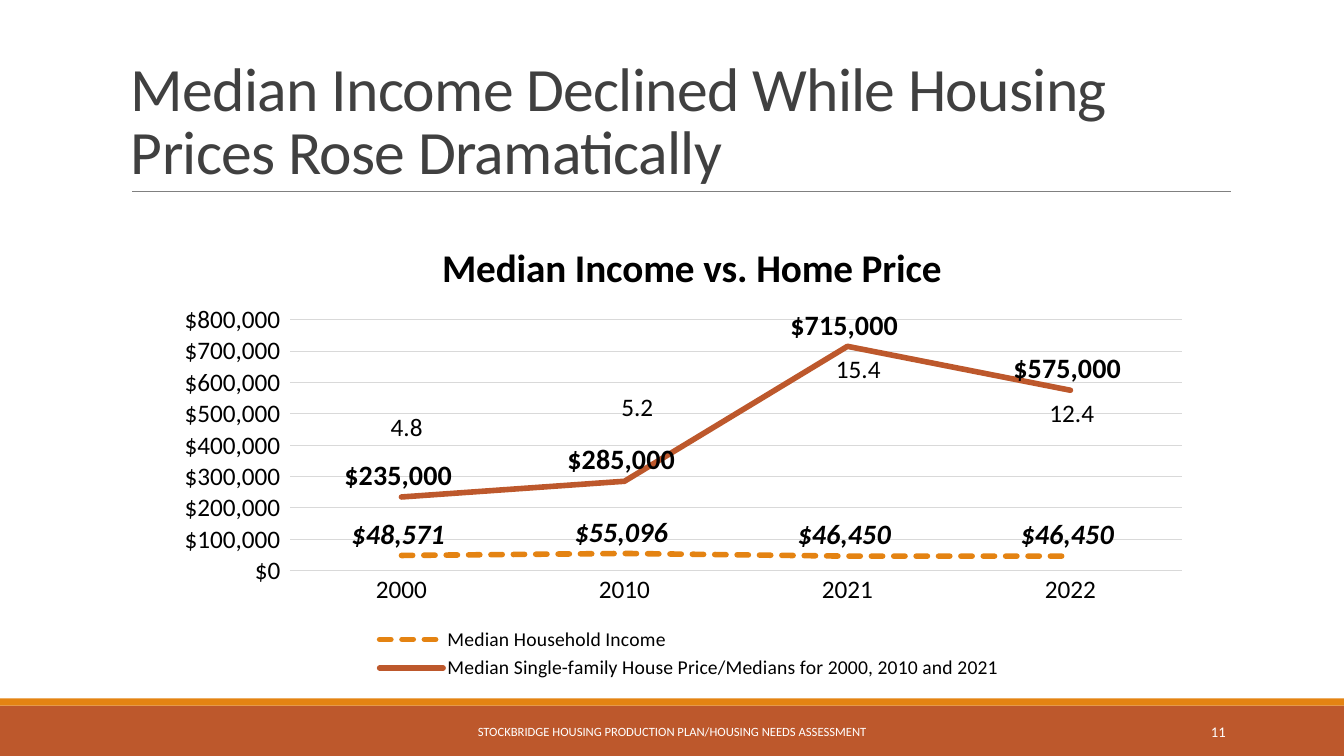
import pptx
import pptx.chart.data
import pptx.dml.color
import pptx.enum.chart
import pptx.enum.dml
import pptx.enum.shapes
import pptx.enum.text
import pptx.oxml
import pptx.oxml.ns
import pptx.util
from pptx.util import Cm

FONT = "Calibri"
COLORS = {"rust": "BD582C", "orange": "E48312", "rule": "808080", "heading": "404040",
          "white": "FFFFFF", "black": "000000", "grid": "D9D9D9"}
HEADING = "Median Income Declined While Housing\vPrices Rose Dramatically"
FOOTER = "STOCKBRIDGE HOUSING PRODUCTION PLAN/HOUSING NEEDS ASSESSMENT"
PAGE_NUMBER = "11"
CHART_TITLE = "Median Income vs. Home Price"
YEARS = ["2000", "2010", "2021", "2022"]
DOLLARS = '"$"#,##0_);[Red]\\("$"#,##0\\)'
# name, values, color, dashed line with italic labels
SERIES = [
    ("Median Household Income", (48571, 55096, 46450, 46450), "orange", True),
    ("Median Single-family House Price/Medians for 2000, 2010 and 2021",
     (235000, 285000, 715000, 575000), "rust", False),
]
# price-to-income ratio, left, top, width in cm
RATIOS = [("4.8", 9.07, 10.24, 2.36), ("5.2", 14.88, 9.73, 2.36),
          ("15.4", 20.68, 8.79, 1.9), ("12.4", 25.83, 9.88, 2.36)]
SLIDE_WIDTH, SLIDE_HEIGHT = 33.87, 19.05
FOOTER_HEIGHT, ACCENT_HEIGHT = 1.27, 0.18

ALIGN = pptx.enum.text.PP_ALIGN
ANCHOR = pptx.enum.text.MSO_ANCHOR


def rgb(color):
    return pptx.dml.color.RGBColor.from_string(COLORS[color])


def style_font(font, size, color="black", bold=False, italic=False):
    font.name = FONT
    font.size = pptx.util.Pt(size)
    font.color.rgb = rgb(color)
    font.bold = bold
    font.italic = italic


def style_line(line, color, width):
    line.color.rgb = rgb(color)
    line.width = pptx.util.Pt(width)


def add_bar(slide, top, height, color):
    bar = slide.shapes.add_shape(pptx.enum.shapes.MSO_SHAPE.RECTANGLE,
                                 0, Cm(top), Cm(SLIDE_WIDTH), Cm(height))
    bar.shadow.inherit = False
    bar.fill.solid()
    bar.fill.fore_color.rgb = rgb(color)
    bar.line.fill.background()


def add_text(slide, box, text, size, color="black", align=ALIGN.CENTER, anchor=ANCHOR.TOP):
    frame = slide.shapes.add_textbox(*map(Cm, box)).text_frame
    frame.word_wrap = True
    frame.vertical_anchor = anchor
    frame.text = text
    paragraph = frame.paragraphs[0]
    paragraph.alignment = align
    style_font(paragraph.font, size, color)
    return paragraph


def add_heading(slide):
    heading = add_text(slide, (3.05, 0.79, 27.94, 4.04), HEADING, 44, "heading",
                       ALIGN.LEFT, ANCHOR.BOTTOM)
    heading.line_spacing = 0.85
    for run in heading.runs:
        run.font._element.set("spc", "-50")
    rule = slide.shapes.add_connector(pptx.enum.shapes.MSO_CONNECTOR.STRAIGHT,
                                      Cm(3.33), Cm(4.83), Cm(31.01), Cm(4.83))
    style_line(rule.line, "rule", 0.5)
    rule._element.spPr.append(pptx.oxml.parse_xml(
        f'<a:effectLst {pptx.oxml.ns.nsdecls("a")}/>'))


def place(part, index, inner=False, **fractions):
    """Set a chart part's manual layout, in fractions of the chart's size."""
    for old in part.findall(pptx.oxml.ns.qn("c:layout")):
        part.remove(old)
    target = '<c:layoutTarget val="inner"/>' if inner else ""
    modes = '<c:xMode val="edge"/><c:yMode val="edge"/>'
    values = "".join(f'<c:{key} val="{value}"/>' for key, value in fractions.items())
    part.insert(index, pptx.oxml.parse_xml(
        f'<c:layout {pptx.oxml.ns.nsdecls("c")}><c:manualLayout>'
        f'{target}{modes}{values}</c:manualLayout></c:layout>'))


def style_axes(chart):
    for axis in (chart.category_axis, chart.value_axis):
        axis.major_tick_mark = axis.minor_tick_mark = pptx.enum.chart.XL_TICK_MARK.NONE
        style_font(axis.tick_labels.font, 18)
    style_line(chart.category_axis.format.line, "grid", 0.75)
    dollars = chart.value_axis
    dollars.minimum_scale, dollars.maximum_scale, dollars.major_unit = 0, 800000, 100000
    dollars.format.line.fill.background()
    style_line(dollars.major_gridlines.format.line, "grid", 0.75)
    dollars.tick_labels.number_format = DOLLARS
    dollars.tick_labels.number_format_is_linked = False


def style_series(series, color, dashed):
    series.smooth = False
    series.marker.style = pptx.enum.chart.XL_MARKER_STYLE.NONE
    line = series.format.line
    style_line(line, color, 4)
    if dashed:
        line.dash_style = pptx.enum.dml.MSO_LINE.SQUARE_DOT
    series._element.spPr.find(pptx.oxml.ns.qn("a:ln")).set("cap", "rnd")
    labels = series.data_labels
    labels.show_value = True
    labels.position = pptx.enum.chart.XL_LABEL_POSITION.ABOVE
    labels.number_format = DOLLARS
    labels.number_format_is_linked = False
    style_font(labels.font, 20, bold=True, italic=dashed)


def add_price_chart(slide):
    figures = pptx.chart.data.CategoryChartData(number_format=DOLLARS)
    figures.categories = YEARS
    for name, values, _, _ in SERIES:
        figures.add_series(name, values)
    chart = slide.shapes.add_chart(pptx.enum.chart.XL_CHART_TYPE.LINE, Cm(4.17), Cm(5.31),
                                   Cm(26.14), Cm(11.94), figures).chart
    style_font(chart.font, 10)
    chart.plots[0].vary_by_categories = False
    style_axes(chart)
    for series, (_, _, color, dashed) in zip(chart.plots[0].series, SERIES):
        style_series(series, color, dashed)

    chart.has_title = True
    chart.chart_title.text_frame.text = CHART_TITLE
    style_font(chart.chart_title.text_frame.paragraphs[0].font, 28, bold=True)
    chart.has_legend = True
    chart.legend.position = pptx.enum.chart.XL_LEGEND_POSITION.BOTTOM
    chart.legend.include_in_layout = False
    style_font(chart.legend.font, 14)

    place(chart.chart_title._element, 1, x=0.26, y=0.05)
    place(chart.legend._element, 1, x=0.2, y=0.87, w=0.61, h=0.13)
    place(chart._chartSpace.chart.plotArea, 0, inner=True, x=0.12, y=0.23, w=0.86, h=0.53)


def main():
    deck = pptx.Presentation()
    deck.slide_width, deck.slide_height = Cm(SLIDE_WIDTH), Cm(SLIDE_HEIGHT)
    slide = deck.slides.add_slide(deck.slide_layouts[6])
    footer_top = SLIDE_HEIGHT - FOOTER_HEIGHT
    add_bar(slide, footer_top, FOOTER_HEIGHT, "rust")
    add_bar(slide, footer_top - ACCENT_HEIGHT, ACCENT_HEIGHT, "orange")
    add_heading(slide)
    add_text(slide, (10.24, 17.93, 13.39, 1.02), FOOTER, 9, "white", anchor=ANCHOR.MIDDLE)
    add_text(slide, (27.51, 17.93, 3.63, 1.02), PAGE_NUMBER, 10.5, "white",
             ALIGN.RIGHT, ANCHOR.MIDDLE)
    add_price_chart(slide)
    for ratio, left, top, width in RATIOS:
        add_text(slide, (left, top, width, 1.02), ratio, 18)
    deck.save("out.pptx")


if __name__ == "__main__":
    main()
